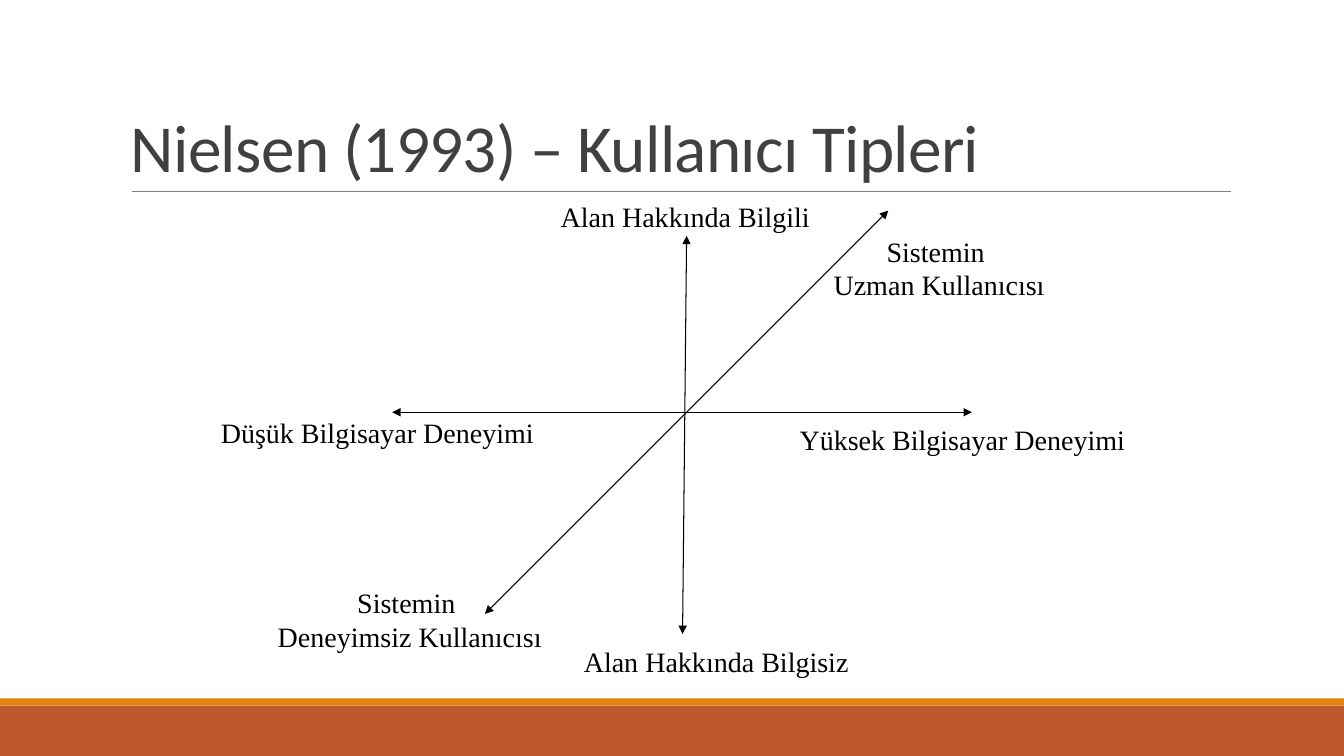
"""Build a slide showing the three dimensions of user types."""
from dataclasses import dataclass

from lxml import etree
from pptx import Presentation
from pptx.dml.color import RGBColor
from pptx.enum.shapes import MSO_CONNECTOR, MSO_SHAPE
from pptx.enum.text import MSO_ANCHOR, PP_ALIGN
from pptx.oxml.ns import qn
from pptx.slide import Slide
from pptx.text.text import TextFrame
from pptx.util import Inches, Pt

STRAIGHT = MSO_CONNECTOR.STRAIGHT
RECTANGLE = MSO_SHAPE.RECTANGLE
BOTTOM, MIDDLE = MSO_ANCHOR.BOTTOM, MSO_ANCHOR.MIDDLE
LEFT, CENTER = PP_ALIGN.LEFT, PP_ALIGN.CENTER
SLIDE_WIDTH, SLIDE_HEIGHT = 13.33, 7.5
LINE_HEIGHT = 0.335


@dataclass(frozen=True)
class Band:
    top: float
    height: float
    color: str


@dataclass(frozen=True)
class Line:
    start: tuple[float, float]
    end: tuple[float, float]
    color: str = "000000"
    width: float = 0.75
    arrows: bool = True


@dataclass(frozen=True)
class Label:
    text: str
    left: float
    top: float
    width: float


BANDS = [Band(7, 0.5, "BD582C"), Band(6.93, 0.07, "E48312")]
LINES = [
    Line((1.31, 1.9), (12.21, 1.9), "808080", 0.5, False),
    Line((6.81, 2.34), (6.77, 6.29)),
    Line((3.89, 4.09), (9.64, 4.09)),
    Line((4.81, 6.09), (8.81, 2.09)),
]
LABELS = [
    Label("Düşük Bilgisayar Deneyimi", 2.19, 4.12, 3.13),
    Label("Yüksek Bilgisayar Deneyimi", 7.93, 4.19, 3.25),
    Label("Alan Hakkında Bilgili", 5.56, 1.98, 2.49),
    Label("Alan Hakkında Bilgisiz", 5.79, 6.39, 2.65),
    Label("Sistemin \nDeneyimsiz Kullanıcısı", 2.75, 5.81, 2.63),
    Label("Sistemin \nUzman Kullanıcısı", 8.26, 2.32, 2.11),
]


def rgb(color: str) -> RGBColor:
    return RGBColor.from_string(color)


def style_text(frame: TextFrame, font: str, size: float, color: str, align: PP_ALIGN) -> None:
    for paragraph in frame.paragraphs:
        paragraph.alignment = align
        for run in paragraph.runs:
            run.font.name = font
            run.font.size = Pt(size)
            run.font.color.rgb = rgb(color)


def draw_band(slide: Slide, band: Band) -> None:
    stripe = slide.shapes.add_shape(
        RECTANGLE, 0, Inches(band.top), Inches(SLIDE_WIDTH), Inches(band.height))
    stripe.shadow.inherit = False
    stripe.fill.solid()
    stripe.fill.fore_color.rgb = rgb(band.color)
    stripe.line.fill.background()


def draw_line(slide: Slide, line: Line) -> None:
    axis = slide.shapes.add_connector(STRAIGHT, *map(Inches, line.start + line.end))
    axis.line.color.rgb = rgb(line.color)
    axis.line.width = Pt(line.width)
    if line.arrows:
        outline = axis.line._get_or_add_ln()
        for tip in ("a:headEnd", "a:tailEnd"):
            etree.SubElement(outline, qn(tip), type="triangle")
    etree.SubElement(axis._element.spPr, qn("a:effectLst"))


def draw_title(slide: Slide) -> None:
    title = slide.shapes.add_textbox(Inches(1.2), Inches(0.31), Inches(11), Inches(1.59))
    frame = title.text_frame
    frame.word_wrap = True
    frame.vertical_anchor = BOTTOM
    frame.text = "Nielsen (1993) – Kullanıcı Tipleri"
    style_text(frame, "Calibri", 48, "404040", LEFT)
    heading = frame.paragraphs[0]
    heading.line_spacing = 0.85
    heading.runs[0].font._element.set("spc", "-50")


def draw_label(slide: Slide, label: Label) -> None:
    lines = label.text.count("\n") + 1
    caption = slide.shapes.add_textbox(
        Inches(label.left), Inches(label.top), Inches(label.width), Inches(lines * LINE_HEIGHT))
    frame = caption.text_frame
    frame.margin_left = frame.margin_right = frame.margin_top = frame.margin_bottom = 0
    frame.word_wrap = False
    frame.vertical_anchor = MIDDLE
    frame.text = label.text
    style_text(frame, "Times New Roman", 20, "000000", CENTER if lines > 1 else LEFT)


def main() -> None:
    deck = Presentation()
    deck.slide_width, deck.slide_height = Inches(SLIDE_WIDTH), Inches(SLIDE_HEIGHT)
    slide = deck.slides.add_slide(deck.slide_layouts[6])
    for band in BANDS:
        draw_band(slide, band)
    draw_title(slide)
    for line in LINES:
        draw_line(slide, line)
    for label in LABELS:
        draw_label(slide, label)
    deck.save("out.pptx")


if __name__ == "__main__":
    main()
